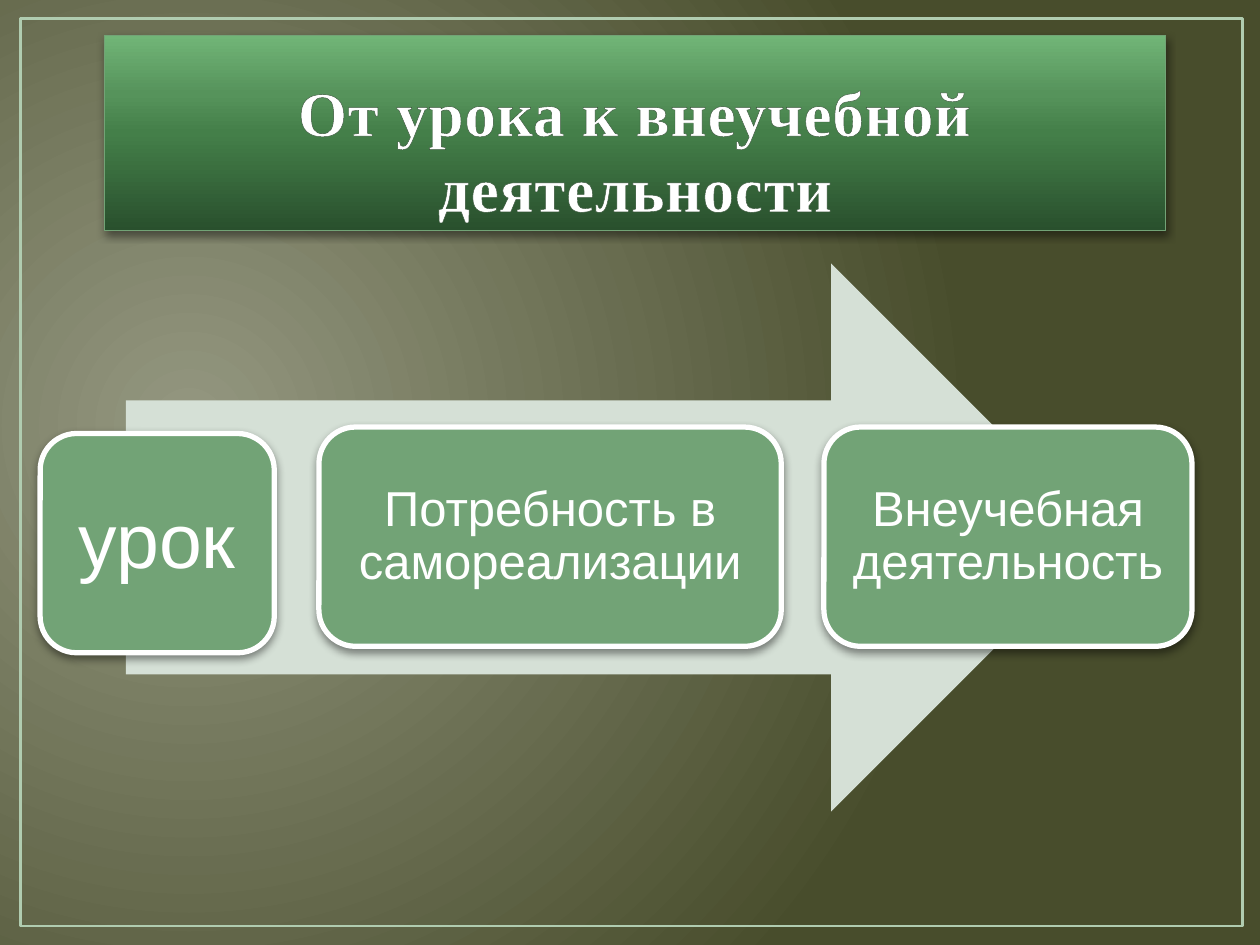
"""Build the slide that leads from the lesson to extracurricular activity."""
from dataclasses import dataclass

from lxml import etree
from pptx import Presentation
from pptx.dml.color import RGBColor
from pptx.enum.shapes import MSO_SHAPE
from pptx.enum.text import MSO_ANCHOR, PP_ALIGN
from pptx.oxml.ns import qn
from pptx.util import Cm, Pt

RECT = MSO_SHAPE.RECTANGLE
ROUND_RECT = MSO_SHAPE.ROUNDED_RECTANGLE
ARROW = MSO_SHAPE.RIGHT_ARROW
CENTER = PP_ALIGN.CENTER
MIDDLE = MSO_ANCHOR.MIDDLE
BOTTOM = MSO_ANCHOR.BOTTOM


@dataclass(frozen=True)
class Theme:
    backdrop: tuple = ((0, "949780"), (100, "484D2C"))
    banner: tuple = ((0, "29502D"), (50, "447F49"), (70, "56935B"), (100, "71B577"))
    frame: str = "B0CCB0"
    arrow: str = "D5E0D6"
    green: str = "72A376"
    white: str = "FFFFFF"
    outline: str = "375439"
    shadow: str = "000000"
    title_font: str = "Times New Roman"
    body_font: str = "Arial"
    title_size: int = 36
    lead_size: int = 44
    step_size: int = 28


THEME = Theme()


def add_node(parent, tag, **attrs):
    return etree.SubElement(parent, qn(tag), {k: str(v) for k, v in attrs.items()})


def add_color(parent, color):
    return add_node(parent, "a:srgbClr", val=color)


def set_gradient(fill, owner, stops):
    fill.gradient()
    grad = owner.find(".//" + qn("a:gradFill"))
    for child in list(grad):
        grad.remove(child)
    gs_list = add_node(grad, "a:gsLst")
    for pos, color in stops:
        add_color(add_node(gs_list, "a:gs", pos=pos * 1000), color)
    return grad


def set_background(s):
    grad = set_gradient(s.background.fill, s.element, THEME.backdrop)
    circle = add_node(grad, "a:path", path="circle")
    add_node(circle, "a:fillToRect", l=15000, t=50000, r=85000, b=60000)


def add_shape(s, kind, box, fill=None, line=None, width=0):
    sp = s.shapes.add_shape(kind, *(Cm(v) for v in box))
    sp.shadow.inherit = False
    if fill:
        sp.fill.solid()
        sp.fill.fore_color.rgb = RGBColor.from_string(fill)
    else:
        sp.fill.background()
    if line:
        sp.line.color.rgb = RGBColor.from_string(line)
        sp.line.width = Pt(width)
    else:
        sp.line.fill.background()
    return sp


def add_shadow(sp):
    effects = sp.element.spPr.find(qn("a:effectLst"))
    shadow = add_node(effects, "a:outerShdw", blurRad=Pt(5), dist=Pt(2),
                      dir=5400000, rotWithShape=0)
    add_node(add_color(shadow, THEME.shadow), "a:alpha", val=43000)


def write_text(sp, text, font, frame):
    tf = sp.text_frame
    for name, value in {"word_wrap": True, **frame}.items():
        setattr(tf, name, value)
    p = tf.paragraphs[0]
    p.alignment = CENTER
    r = p.add_run()
    r.text = text
    for name, value in font.items():
        setattr(r.font, name, value)
    r.font.color.rgb = RGBColor.from_string(THEME.white)
    return p, r


def add_title(s, text):
    sp = add_shape(s, RECT, (2.11, 0.71, 21.39, 3.94), line=THEME.green, width=0.75)
    grad = set_gradient(sp.fill, sp.element.spPr, THEME.banner)
    add_node(grad, "a:lin", ang=16200000, scaled=0)
    add_shadow(sp)
    font = {"name": THEME.title_font, "size": Pt(THEME.title_size), "bold": True}
    _, r = write_text(sp, text, font, {"vertical_anchor": BOTTOM})
    props = r.font._element if hasattr(r.font, "_element") else r._r.get_or_add_rPr()
    props.set("spc", "50")
    ln = add_node(props, "a:ln", w=Pt(1.05))
    add_color(add_node(ln, "a:solidFill"), THEME.outline)
    props.insert(0, ln)


def add_step(s, text, left, top, width, size, inset):
    sp = add_shape(s, ROUND_RECT, (left, top, width, 4.42), THEME.green, THEME.white, 3)
    add_shadow(sp)
    sides = ("left", "top", "right", "bottom")
    frame = {f"margin_{side}": Cm(inset) for side in sides}
    font = {"name": THEME.body_font, "size": Pt(size)}
    p, _ = write_text(sp, text, font, {"vertical_anchor": MIDDLE, **frame})
    p.line_spacing = 0.9


def main():
    prs = Presentation()
    prs.slide_width, prs.slide_height = Cm(25.4), Cm(19.05)
    s = prs.slides.add_slide(prs.slide_layouts[6])
    set_background(s)
    add_shape(s, RECT, (0.41, 0.38, 24.64, 18.29), line=THEME.frame, width=1.5)
    add_title(s, "От урока к внеучебной деятельности")
    add_shape(s, ARROW, (2.54, 5.31, 19.74, 11.05), THEME.arrow)
    steps = (
        ("урок", 0.81, 8.74, 4.72, THEME.lead_size, 0.46),
        ("Потребность в самореализации", 6.43, 8.61, 9.32, THEME.step_size, 0.3),
        ("Внеучебная деятельность", 16.61, 8.61, 7.42, THEME.step_size, 0.3),
    )
    for step in steps:
        add_step(s, *step)
    prs.save("out.pptx")


if __name__ == "__main__":
    main()
